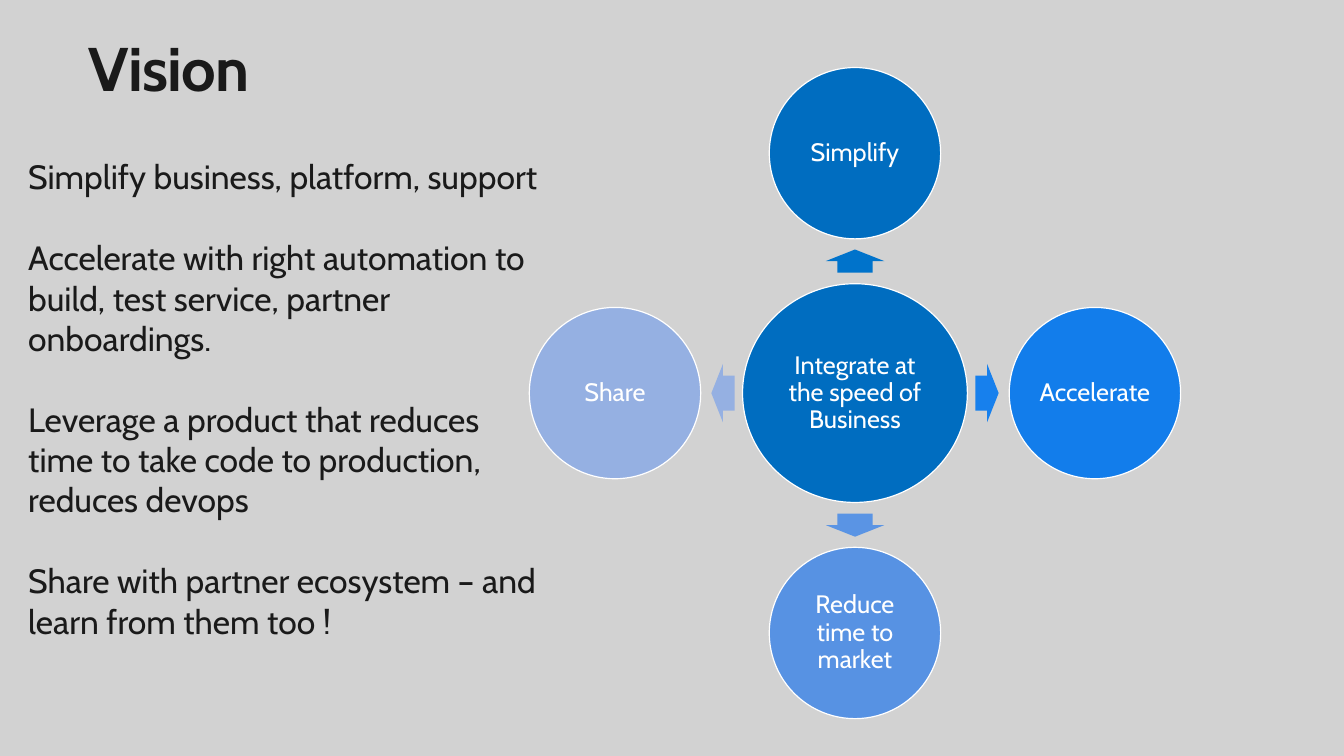
from math import cos, radians, sin

from pptx import Presentation
from pptx.dml.color import RGBColor as RGB
from pptx.enum.shapes import MSO_SHAPE as Shape
from pptx.enum.text import MSO_ANCHOR as Anchor, PP_ALIGN as Align
from pptx.util import Inches, Pt

HUES = {
    "back": "D2D2D2", "ink": "1A1A1A", "white": "FFFFFF", "hub": "006DC0",
    "up": "0073CB", "right": "127DEB", "tip": "1780ED",
    "down": "5792E3", "drop": "5A94E4", "left": "95B0E2",
}
FONT = "Cabin"
MID_X, MID_Y = 8.48, 3.9
ORBIT, REACH = 2.38, 1.31


def add_text(left, top, width, height, lines, size, bold=False):
    frame = slide.shapes.add_textbox(
        Inches(left), Inches(top), Inches(width), Inches(height)).text_frame
    frame.word_wrap = True
    frame.margin_left = frame.margin_right = 0
    frame.margin_top = frame.margin_bottom = 0
    for i, line in enumerate(lines):
        para = frame.paragraphs[0] if i == 0 else frame.add_paragraph()
        para.text = line
        if i:
            para.space_before = Pt(29)
        font = para.runs[0].font
        font.name, font.size, font.bold = FONT, Pt(size), bold
        font.color.rgb = RGB.from_string(HUES["ink"])
    return frame


def add_part(kind, x, y, width, height, hue):
    """Add a plain filled shape centred on x, y."""
    part = slide.shapes.add_shape(
        kind, Inches(x - width / 2), Inches(y - height / 2),
        Inches(width), Inches(height))
    part.shadow.inherit = False
    part.fill.solid()
    part.fill.fore_color.rgb = RGB.from_string(HUES[hue])
    part.line.fill.background()
    return part


deck = Presentation()
deck.slide_width, deck.slide_height = Inches(13.33), Inches(7.5)
slide = deck.slides.add_slide(deck.slide_layouts[6])
slide.background.fill.solid()
slide.background.fill.fore_color.rgb = RGB.from_string(HUES["back"])

title = add_text(0.88, 0.3, 11.8, 0.74, ["Vision"], 44, True)
title.paragraphs[0].runs[0].font._element.set("spc", "-50")

# Hub and four circles around it, each with an arrow pointing outward
circles = [("Integrate at the speed of Business", MID_X, MID_Y, 2.23, 2.17, "hub")]
spokes = [
    ("Simplify", 270, "hub", "up"),
    ("Accelerate", 0, "right", "tip"),
    ("Reduce time to market", 90, "down", "drop"),
    ("Share", 180, "left", "left"),
]
for label, turn, hue, tint in spokes:
    dx, dy = cos(radians(turn)), sin(radians(turn))
    circles.append((label, MID_X + ORBIT * dx, MID_Y + ORBIT * dy, 1.7, 1.7, hue))
    arrow = add_part(Shape.RIGHT_ARROW, MID_X + REACH * dx, MID_Y + REACH * dy,
                     0.23, 0.58, tint)
    arrow.rotation = turn
    arrow.adjustments[0], arrow.adjustments[1] = 0.6, 0.5

for label, x, y, width, height, hue in circles:
    disc = add_part(Shape.OVAL, x, y, width, height, hue)
    disc.line.color.rgb = RGB.from_string(HUES["white"])
    disc.line.width = Pt(0.85)
    frame = disc.text_frame
    frame.word_wrap = True
    frame.vertical_anchor = Anchor.MIDDLE
    frame.margin_left = frame.margin_right = Inches(0.03)
    frame.margin_top = frame.margin_bottom = Inches(0.03)
    para = frame.paragraphs[0]
    para.text = label
    para.alignment = Align.CENTER
    para.line_spacing = 0.9
    font = para.runs[0].font
    font.name, font.size = FONT, Pt(18)
    font.color.rgb = RGB.from_string(HUES["white"])

add_text(0.28, 1.55, 5.12, 5.25, [
    "Simplify business, platform, support",
    "Accelerate with right automation to build, test service, partner onboardings.",
    "Leverage a product that reduces time to take code to production, reduces devops",
    "Share with partner ecosystem – and learn from them too !",
], 24)

deck.save("out.pptx")
